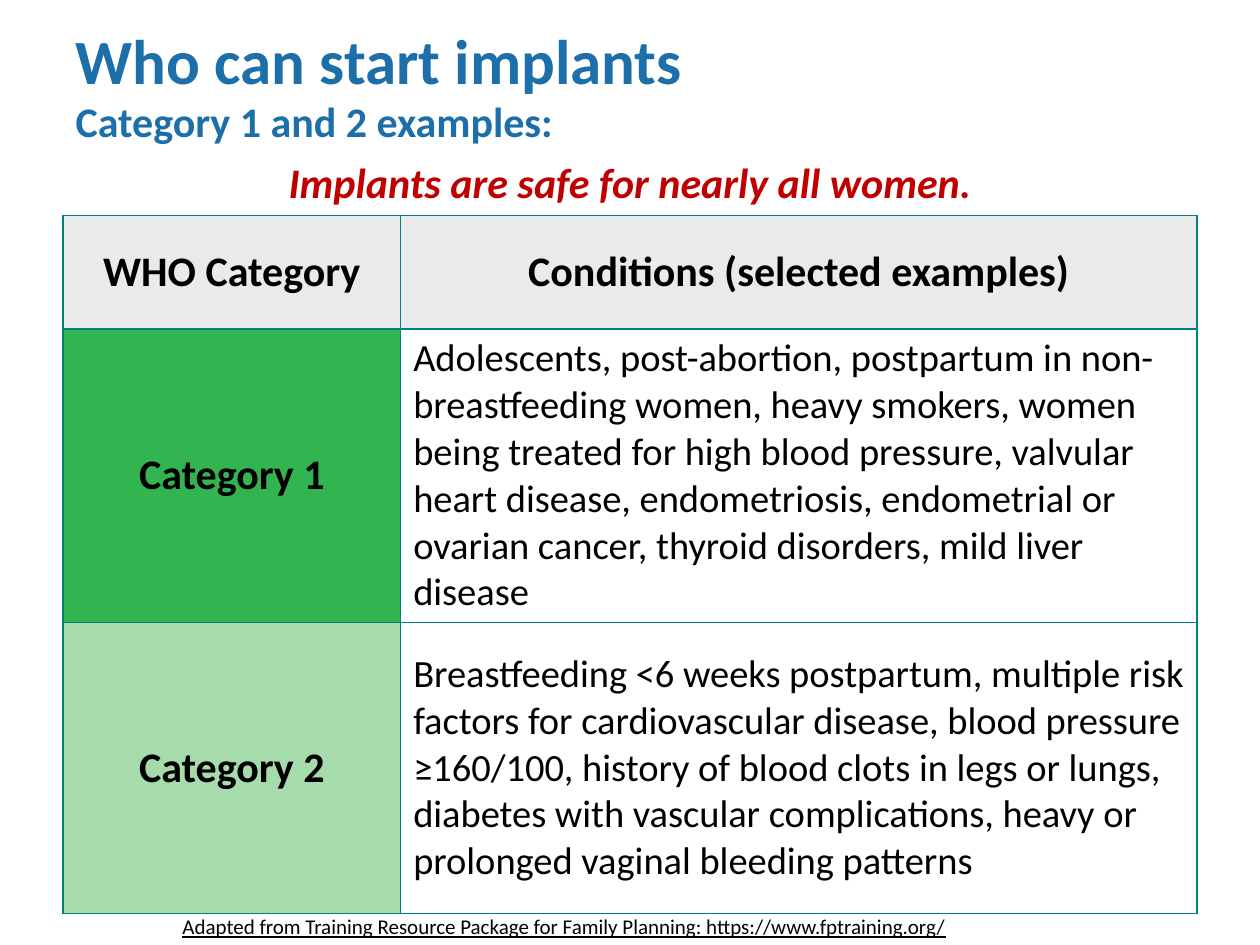
from dataclasses import dataclass

from lxml import etree
from pptx import Presentation
from pptx import util as u
from pptx.dml import color
from pptx.enum import text
from pptx.oxml import ns


@dataclass(frozen=True)
class Theme:
    font: str = "Calibri"
    blue: str = "1D6FA9"
    red: str = "C00000"
    black: str = "000000"
    border: str = "008080"
    header: str = "EAEAEA"
    category_1: str = "32B450"
    category_2: str = "A6DBAB"
    title: int = 36
    heading: int = 24
    body: int = 22
    source: int = 12


THEME = Theme()
MARGIN, CONTENT_WIDTH = 0.5, 9
COLUMN_WIDTHS = (2.68, 6.32)
ROW_HEIGHTS = (0.9, 2.31, 2.31)
ROWS = (
    ("WHO Category", "Conditions (selected examples)"),
    ("Category 1",
     "Adolescents, post-abortion, postpartum in non-breastfeeding women, "
     "heavy smokers, women being treated for high blood pressure, valvular "
     "heart disease, endometriosis, endometrial or ovarian cancer, thyroid "
     "disorders, mild liver disease"),
    ("Category 2",
     "Breastfeeding <6 weeks postpartum, multiple risk factors for "
     "cardiovascular disease, blood pressure ≥160/100, history of blood clots "
     "in legs or lungs, diabetes with vascular complications, heavy or "
     "prolonged vaginal bleeding patterns"),
)
FILLS = (
    (THEME.header, THEME.header),
    (THEME.category_1, None),
    (THEME.category_2, None),
)


def add_run(paragraph, content, size, rgb=THEME.black, bold=False,
            italic=False, underline=False):
    run = paragraph.add_run()
    run.text = content
    font = run.font
    font.name, font.size = THEME.font, u.Pt(size)
    font.bold, font.italic, font.underline = bold, italic, underline
    font.color.rgb = color.RGBColor.from_string(rgb)


def set_margins(target):
    target.margin_left = target.margin_right = u.Inches(0.1)
    target.margin_top = target.margin_bottom = u.Inches(0.05)


def set_title(slide):
    title = slide.shapes.title
    title.left, title.top = u.Inches(MARGIN), u.Inches(0.19)
    title.width, title.height = u.Inches(CONTENT_WIDTH), u.Inches(1)
    frame = title.text_frame
    frame.auto_size = text.MSO_AUTO_SIZE.NONE
    frame.vertical_anchor = text.MSO_ANCHOR.MIDDLE
    set_margins(frame)
    lines = (
        (frame.paragraphs[0], "Who can start implants", THEME.title),
        (frame.add_paragraph(), "Category 1 and 2 examples:", THEME.heading),
    )
    for paragraph, content, size in lines:
        paragraph.alignment = text.PP_ALIGN.LEFT
        paragraph.line_spacing = 0.95
        paragraph.space_before = u.Pt(0)
        add_run(paragraph, content, size, THEME.blue, bold=True)


def add_text(slide, left, top, width, height, content, alignment, **style):
    box = slide.shapes.add_textbox(*map(u.Inches, (left, top, width, height)))
    frame = box.text_frame
    frame.word_wrap = True
    set_margins(frame)
    paragraph = frame.paragraphs[0]
    paragraph.alignment = alignment
    add_run(paragraph, content, **style)


def set_borders(cell):
    properties = cell._tc.get_or_add_tcPr()
    for index, side in enumerate(("a:lnL", "a:lnR", "a:lnT", "a:lnB")):
        line = etree.Element(ns.qn(side), w=str(u.Pt(1)))
        fill = etree.SubElement(line, ns.qn("a:solidFill"))
        etree.SubElement(fill, ns.qn("a:srgbClr"), val=THEME.border)
        properties.insert(index, line)


def fill_cell(cell, content, fill, is_label):
    set_margins(cell)
    cell.vertical_anchor = text.MSO_ANCHOR.MIDDLE
    if fill:
        cell.fill.solid()
        cell.fill.fore_color.rgb = color.RGBColor.from_string(fill)
    else:
        cell.fill.background()
    set_borders(cell)
    paragraph = cell.text_frame.paragraphs[0]
    paragraph.alignment = text.PP_ALIGN.CENTER if is_label else text.PP_ALIGN.LEFT
    add_run(paragraph, content, THEME.heading if is_label else THEME.body,
            bold=is_label)


def add_category_table(slide):
    table = slide.shapes.add_table(
        len(ROWS), len(COLUMN_WIDTHS), u.Inches(MARGIN), u.Inches(1.71),
        u.Inches(CONTENT_WIDTH), u.Inches(sum(ROW_HEIGHTS))).table
    table.first_row = table.horz_banding = False
    for column, width in zip(table.columns, COLUMN_WIDTHS):
        column.width = u.Inches(width)
    for row, height in zip(table.rows, ROW_HEIGHTS):
        row.height = u.Inches(height)
    for r, (contents, fills) in enumerate(zip(ROWS, FILLS)):
        for c, (content, fill) in enumerate(zip(contents, fills)):
            fill_cell(table.cell(r, c), content, fill, r == 0 or c == 0)


def main():
    presentation = Presentation()
    presentation.slide_width = u.Inches(10)
    presentation.slide_height = u.Inches(7.5)
    slide = presentation.slides.add_slide(presentation.slide_layouts[5])
    set_title(slide)
    add_category_table(slide)
    add_text(slide, MARGIN, 1.19, CONTENT_WIDTH, 0.51,
             "Implants are safe for nearly all women.", text.PP_ALIGN.CENTER,
             size=THEME.heading, rgb=THEME.red, bold=True, italic=True)
    add_text(slide, 1.35, 7.2, 6.94, 0.27,
             "Adapted from Training Resource Package for Family Planning: "
             "https://www.fptraining.org/", text.PP_ALIGN.LEFT,
             size=THEME.source, underline=True)
    presentation.save("out.pptx")


if __name__ == "__main__":
    main()
